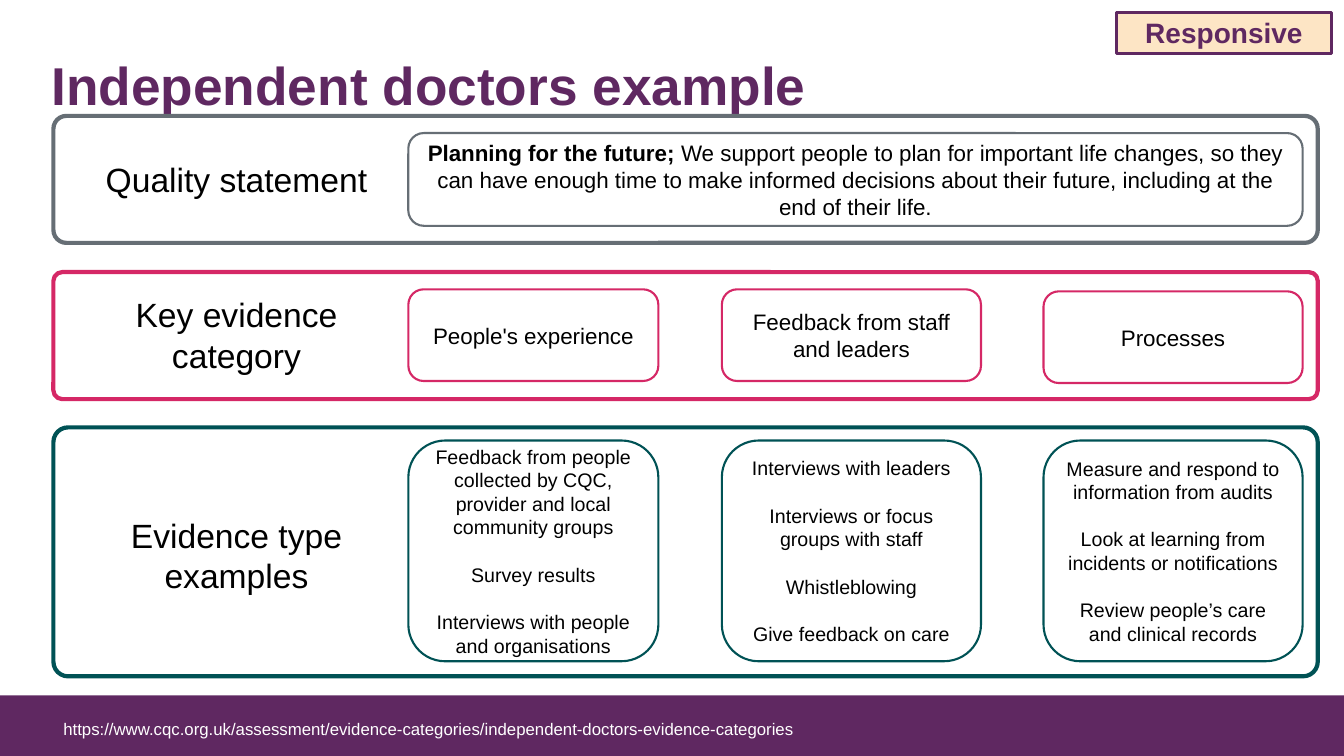
from dataclasses import dataclass

from pptx import Presentation
from pptx.dml.color import RGBColor
from pptx.enum.shapes import MSO_SHAPE
from pptx.enum.text import MSO_ANCHOR, MSO_AUTO_SIZE, PP_ALIGN
from pptx.util import Inches, Pt

RECTANGLE = MSO_SHAPE.RECTANGLE
ROUNDED = MSO_SHAPE.ROUNDED_RECTANGLE
LEFT, CENTER = PP_ALIGN.LEFT, PP_ALIGN.CENTER
TOP, MIDDLE = MSO_ANCHOR.TOP, MSO_ANCHOR.MIDDLE


@dataclass(frozen=True)
class Theme:
    font: str = "Arial"
    purple: str = "5F2861"
    peach: str = "FDE5C5"
    grey: str = "666E75"
    pink: str = "D52866"
    teal: str = "005255"
    black: str = "000000"
    white: str = "FFFFFF"
    title: int = 38
    label: int = 24
    badge: int = 20
    category: int = 16
    example: int = 14
    source: int = 12


theme = Theme()


def add_box(kind, left, top, width, height, fill=None, line=None, line_width=1.5):
    shape = slide.shapes.add_shape(
        kind, Inches(left), Inches(top), Inches(width), Inches(height))
    shape.shadow.inherit = False
    if fill:
        shape.fill.solid()
        shape.fill.fore_color.rgb = RGBColor.from_string(fill)
    else:
        shape.fill.background()
    if line:
        shape.line.color.rgb = RGBColor.from_string(line)
        shape.line.width = Pt(line_width)
    else:
        shape.line.fill.background()
    return shape


def write(shape, paragraphs, size, color=theme.black, align=CENTER, anchor=MIDDLE, gap=0):
    """Each paragraph is a list of (text, bold) runs."""
    frame = shape.text_frame
    frame.word_wrap = True
    frame.auto_size = MSO_AUTO_SIZE.NONE
    frame.vertical_anchor = anchor
    for index, runs in enumerate(paragraphs):
        paragraph = frame.add_paragraph() if index else frame.paragraphs[0]
        paragraph.alignment = align
        paragraph.space_before = Pt(gap if index else 0)
        for text, bold in runs:
            run = paragraph.add_run()
            run.text = text
            run.font.name = theme.font
            run.font.size = Pt(size)
            run.font.bold = bold
            run.font.color.rgb = RGBColor.from_string(color)


presentation = Presentation()
presentation.slide_width = Inches(13.33)
presentation.slide_height = Inches(7.5)
slide = presentation.slides.add_slide(presentation.slide_layouts[5])

# Title
title = slide.shapes.title
title.left, title.top = Inches(0.41), Inches(0.45)
title.width, title.height = Inches(12.51), Inches(0.77)
write(title, [[("Independent doctors example", True)]], theme.title, theme.purple, LEFT)

# Footer band with the source address
add_box(RECTANGLE, 0, 6.9, 13.33, 0.6, fill=theme.purple)
source = slide.shapes.add_textbox(Inches(0.53), Inches(7.08), Inches(11), Inches(0.3))
write(source, [[("https://www.cqc.org.uk/assessment/evidence-categories/"
                 "independent-doctors-evidence-categories", False)]],
      theme.source, theme.white, LEFT, TOP)

# Three framed rows: label, colour, frame top, height and corner, label top and height
rows = [
    ("Quality statement", theme.grey, 1.15, 1.26, 0.102, 1.53, 0.5),
    ("Key evidence category", theme.pink, 2.7, 1.26, 0.069, 2.87, 0.91),
    ("Evidence type examples", theme.teal, 4.24, 2.47, 0.059, 5.06, 0.91),
]
for text, color, top, height, corner, label_top, label_height in rows:
    frame_box = add_box(ROUNDED, 0.53, top, 12.54, height, line=color, line_width=3)
    frame_box.adjustments[0] = corner
    label = slide.shapes.add_textbox(
        Inches(0.89), Inches(label_top), Inches(2.91), Inches(label_height))
    write(label, [[(text, False)]], theme.label, anchor=TOP)

# Quality statement
statement = add_box(ROUNDED, 4.05, 1.32, 8.87, 0.92, line=theme.grey)
write(statement, [[
    ("Planning for the future; ", True),
    ("We support people to plan for important life changes, so they can have enough "
     "time to make informed decisions about their future, including at the end of "
     "their life.", False),
]], theme.category)

# One column per evidence category: left, width, category top, category, examples
columns = [
    (4.05, 2.48, 2.87, "People's experience", [
        "Feedback from people collected by CQC, provider and local community groups",
        "Survey results",
        "Interviews with people and organisations"]),
    (7.16, 2.57, 2.87, "Feedback from staff and leaders", [
        "Interviews with leaders",
        "Interviews or focus groups with staff",
        "Whistleblowing",
        "Give feedback on care"]),
    (10.35, 2.57, 2.89, "Processes", [
        "Measure and respond to information from audits",
        "Look at learning from incidents or notifications",
        "Review people’s care and clinical records"]),
]
for left, width, category_top, category, examples in columns:
    category_box = add_box(ROUNDED, left, category_top, width, 0.91, line=theme.pink)
    write(category_box, [[(category, False)]], theme.category)
    examples_box = add_box(ROUNDED, left, 4.37, width, 2.19, line=theme.teal)
    write(examples_box, [[(example, False)] for example in examples],
          theme.example, gap=17)

# Badge
badge = add_box(RECTANGLE, 11.07, 0.12, 2.14, 0.41, theme.peach, theme.purple, 2)
write(badge, [[("Responsive", True)]], theme.badge, theme.purple)

presentation.save("out.pptx")
